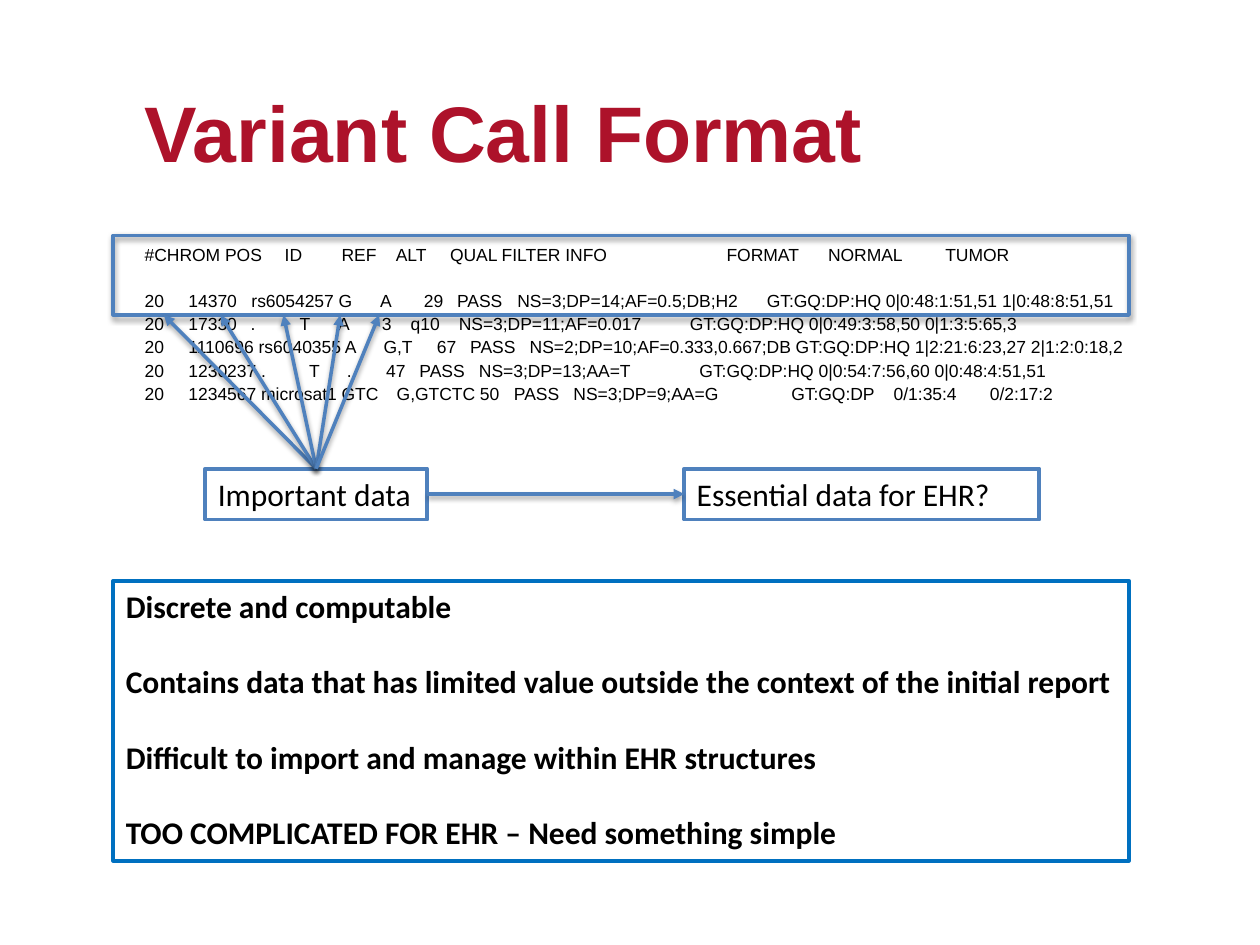
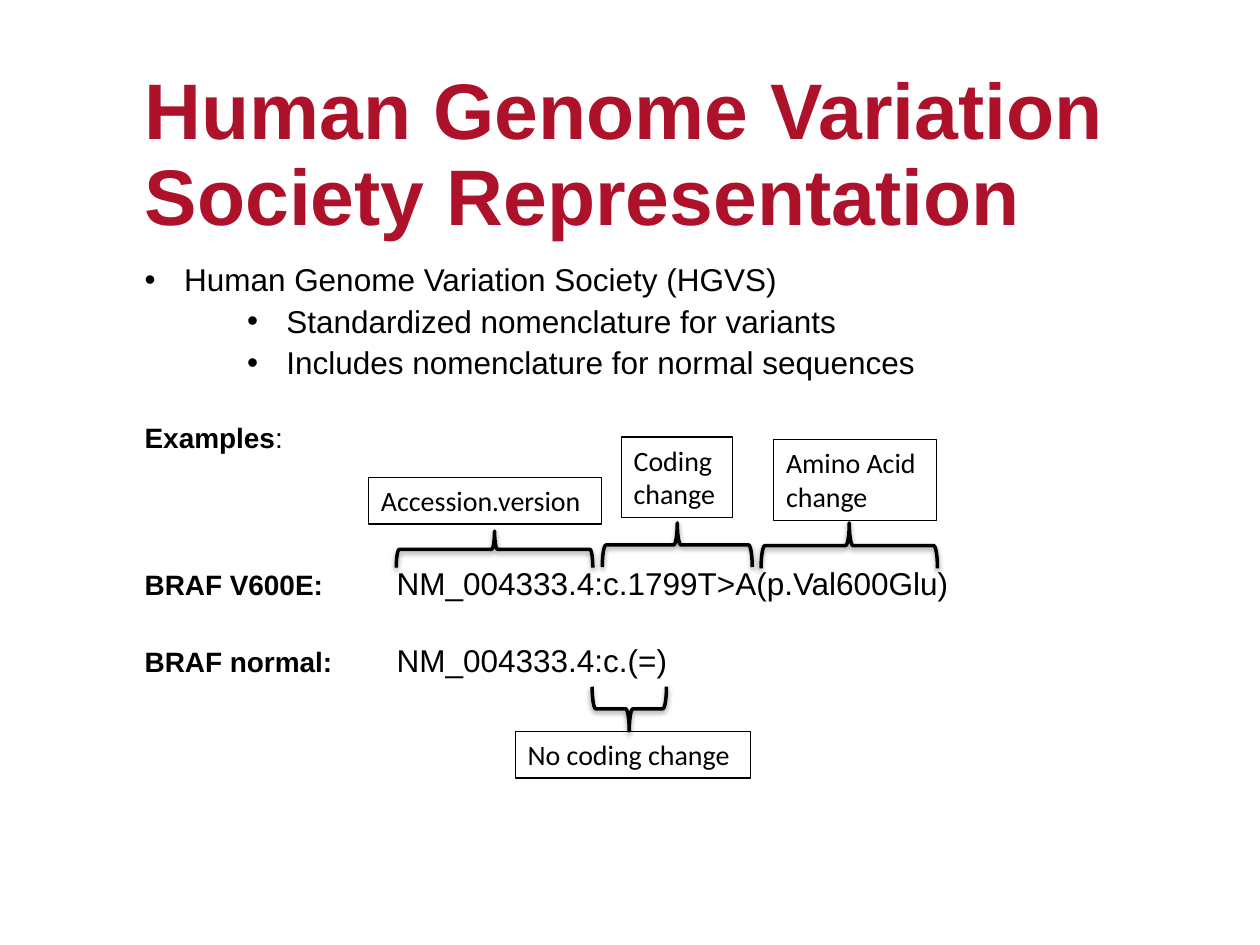
from dataclasses import dataclass

from lxml.etree import SubElement
from pptx import Presentation
from pptx.dml.color import RGBColor
from pptx.enum.shapes import MSO_CONNECTOR as Connector, MSO_SHAPE as Shape
from pptx.enum.text import MSO_ANCHOR as Anchor, PP_ALIGN as Align
from pptx.oxml.ns import qn
from pptx.util import Pt


@dataclass(frozen=True)
class Theme:
    red: str = "AD122A"
    black: str = "000000"
    blue: str = "4F81BD"
    bright_blue: str = "0070C0"
    heading_font: str = "Arial"
    label_font: str = "Calibri"
    title: float = 45
    body: float = 18
    label: float = 16
    code: float = 10
    frame_line: float = 2.25
    arrow_line: float = 2
    thin_line: float = 0.75
    line_spacing: float = 0.9
    left: float = 75.6
    width: float = 599


class SlideBuilder:
    def __init__(self, deck, theme):
        self.deck = deck
        self.theme = theme
        self.page = None

    def new_page(self, title, title_height):
        self.page = self.deck.slides.add_slide(self.deck.slide_layouts[6])
        theme = self.theme
        frame = self.text_box(theme.left, 31, theme.width, title_height)
        frame.margin_top = frame.margin_bottom = 0
        frame.vertical_anchor = Anchor.BOTTOM
        para = self.paragraph(frame, spacing=theme.line_spacing)
        self.span(para, title, theme.title, color=theme.red, bold=True)

    def text_box(self, left, top, width, height):
        box = self.page.shapes.add_textbox(Pt(left), Pt(top), Pt(width), Pt(height))
        box.text_frame.word_wrap = True
        return box.text_frame

    def paragraph(self, frame, before=0, spacing=None, tabs=(), bullet_indent=None):
        """Add a paragraph, using the empty first one when it is free."""
        first = frame.paragraphs[0]
        para = frame.add_paragraph() if first.runs else first
        para.alignment = Align.LEFT
        para.space_before = Pt(before)
        if spacing:
            para.line_spacing = spacing
        settings = para._p.get_or_add_pPr()
        if bullet_indent:
            settings.set("marL", str(Pt(bullet_indent)))
            settings.set("indent", str(-Pt(22.5)))
            SubElement(settings, qn("a:buFont"), typeface=self.theme.heading_font)
            SubElement(settings, qn("a:buChar"), char="•")
        if tabs:
            stops = SubElement(settings, qn("a:tabLst"))
            for stop in tabs:
                SubElement(stops, qn("a:tab"), pos=str(Pt(stop)), algn="l")
        return para

    def span(self, para, text, size, font=None, color=None, bold=False):
        span = para.add_run()
        span.text = text
        span.font.name = font or self.theme.heading_font
        span.font.size = Pt(size)
        span.font.bold = bold
        span.font.color.rgb = RGBColor.from_string(color or self.theme.black)

    def outline(self, kind, left, top, width, height, color, weight, shadow=False):
        """Draw an unfilled preset shape."""
        shape = self.page.shapes.add_shape(kind, Pt(left), Pt(top), Pt(width), Pt(height))
        shape.fill.background()
        self.stroke(shape, color, weight)
        shape.shadow.inherit = False
        if shadow:
            self.drop_shadow(shape._element.spPr.find(qn("a:effectLst")))
        return shape

    def stroke(self, item, color, weight):
        item.line.color.rgb = RGBColor.from_string(color)
        item.line.width = Pt(weight)

    def drop_shadow(self, effects):
        shadow = SubElement(effects, qn("a:outerShdw"), blurRad=str(Pt(3.1)),
                            dist=str(Pt(1.6)), dir="5400000", rotWithShape="0")
        color = SubElement(shadow, qn("a:srgbClr"), val=self.theme.black)
        SubElement(color, qn("a:alpha"), val="38000")

    def label(self, left, top, width, height, lines, size, color, weight, bold=False, gap=0):
        """Draw a framed box with one paragraph per line."""
        box = self.outline(Shape.RECTANGLE, left, top, width, height, color, weight)
        frame = box.text_frame
        frame.word_wrap = True
        frame.vertical_anchor = Anchor.TOP
        for index, line in enumerate(lines):
            para = self.paragraph(frame, before=gap if index else 0)
            self.span(para, line, size, font=self.theme.label_font, bold=bold)

    def arrow(self, start, end):
        line = self.page.shapes.add_connector(
            Connector.STRAIGHT, *(Pt(value) for value in (*start, *end)))
        self.stroke(line, self.theme.blue, self.theme.arrow_line)
        SubElement(line.line._get_or_add_ln(), qn("a:tailEnd"), type="triangle")
        self.drop_shadow(SubElement(line._element.spPr, qn("a:effectLst")))

    def brace(self, center_x, center_y, span, depth, rotation):
        """Draw a brace lying on its side, span wide and depth high."""
        shape = self.outline(Shape.LEFT_BRACE, center_x - depth / 2, center_y - span / 2,
                             depth, span, self.theme.black, self.theme.arrow_line, shadow=True)
        shape.rotation = rotation


# Each row: its cells, then the tab stops that lead to the second and later cells.
VCF_ROWS = [
    (["#CHROM POS", "ID", "REF", "ALT", "QUAL FILTER INFO", "FORMAT", "NORMAL", "TUMOR"],
     [80, 112.5, 143.5, 174.5, 332.5, 390.5, 457.5]),
    (["20", "14370", "rs6054257 G", "A", "29", "PASS", "NS=3;DP=14;AF=0.5;DB;H2",
      "GT:GQ:DP:HQ 0|0:48:1:51,51 1|0:48:8:51,51"],
     [25, 61, 134.5, 159.5, 178.5, 213, 355.5]),
    (["20", "17330", ".", "T", "A", "3", "q10", "NS=3;DP=11;AF=0.017",
      "GT:GQ:DP:HQ 0|0:49:3:58,50 0|1:3:5:65,3"],
     [25, 60.5, 88.5, 110.5, 135.5, 152, 179.5, 311.5]),
    (["20", "1110696 rs6040355 A", "G,T", "67", "PASS",
      "NS=2;DP=10;AF=0.333,0.667;DB GT:GQ:DP:HQ 1|2:21:6:23,27 2|1:2:0:18,2"],
     [25, 136.5, 167, 186, 220]),
    (["20", "1230237 .", "T", ".", "47", "PASS", "NS=3;DP=13;AA=T",
      "GT:GQ:DP:HQ 0|0:54:7:56,60 0|0:48:4:51,51"],
     [25, 94, 115.5, 138, 157, 191, 317]),
    (["20", "1234567 microsat1 GTC", "G,GTCTC 50", "PASS", "NS=3;DP=9;AA=G",
      "GT:GQ:DP", "0/1:35:4", "0/2:17:2"],
     [25, 144, 211, 245, 369.5, 428, 483]),
]


def build_variant_call_format(builder):
    theme = builder.theme
    builder.new_page("Variant Call Format", 71.3)

    frame = builder.text_box(theme.left, 137.3, theme.width, 90)
    for index, (cells, stops) in enumerate(VCF_ROWS):
        before = {0: 0, 1: 15.3}.get(index, 2.5)
        para = builder.paragraph(frame, before, theme.line_spacing, tabs=stops)
        builder.span(para, "\t".join(cells), theme.code)

    builder.outline(Shape.RECTANGLE, 64.8, 134.6, 580.3, 45.4, theme.blue,
                    theme.frame_line, shadow=True)
    box_top, box_height = 267.8, 29.1
    for left, width, text in [(117.4, 126.7, "Important data"),
                              (391, 203, "Essential data for EHR?")]:
        builder.label(left, box_top, width, box_height, [text], theme.body,
                      theme.blue, theme.frame_line)
    for column_x in (93.6, 126, 162, 194.4, 216.7):
        builder.arrow((180.7, box_top), (column_x, 180))
    middle = box_top + box_height / 2
    builder.arrow((244.1, middle), (391, middle))

    builder.label(64.8, 331.9, 580.3, 160, [
        "Discrete and computable",
        "Contains data that has limited value outside the context of the initial report",
        "Difficult to import and manage within EHR structures",
        "TOO COMPLICATED FOR EHR – Need something simple",
    ], theme.body, theme.bright_blue, theme.frame_line, bold=True, gap=21.5)


def build_hgvs(builder):
    theme = builder.theme
    builder.new_page("Human Genome Variation Society Representation", 107.3)

    frame = builder.text_box(theme.left, 147.6, 573, 311)
    for text, indent, before in [
        ("Human Genome Variation Society (HGVS)", 22.5, 0),
        ("Standardized nomenclature for variants", 81, 4.2),
        ("Includes nomenclature for normal sequences", 81, 4.2),
    ]:
        para = builder.paragraph(frame, before, theme.line_spacing, bullet_indent=indent)
        builder.span(para, text, theme.body)

    para = builder.paragraph(frame, 24.5, theme.line_spacing)
    builder.span(para, "Examples", theme.label, bold=True)
    builder.span(para, ":", theme.label)
    for name, notation, before in [
        ("BRAF V600E:", "NM_004333.4:c.1799T>A(p.Val600Glu)", 65),
        ("BRAF normal:", "NM_004333.4:c.(=)", 24.5),
    ]:
        para = builder.paragraph(frame, before, theme.line_spacing, tabs=[144])
        builder.span(para, f"{name}\t", theme.label, bold=True)
        builder.span(para, notation, theme.body)

    for center_x, center_y, span, depth, rotation in [
        (282.6, 313.9, 112.3, 20.9, 90),
        (387, 311.4, 85.7, 25.2, 90),
        (485.3, 311.8, 100.8, 25.9, 90),
        (359.6, 405, 42.5, 25.2, 270),
    ]:
        builder.brace(center_x, center_y, span, depth, rotation)

    for left, top, width, height, text in [
        (210.6, 272.9, 133.2, 26.6, "Accession.version"),
        (355, 249.8, 63.4, 46.1, "Coding change"),
        (442.1, 251.3, 92.9, 46.1, "Amino Acid change"),
        (294.5, 418, 134.6, 26.6, "No coding change"),
    ]:
        builder.label(left, top, width, height, [text], theme.label,
                      theme.black, theme.thin_line)


def main():
    deck = Presentation()
    deck.slide_width, deck.slide_height = Pt(720), Pt(540)
    builder = SlideBuilder(deck, Theme())
    build_variant_call_format(builder)
    build_hgvs(builder)
    deck.save("out.pptx")


if __name__ == "__main__":
    main()
